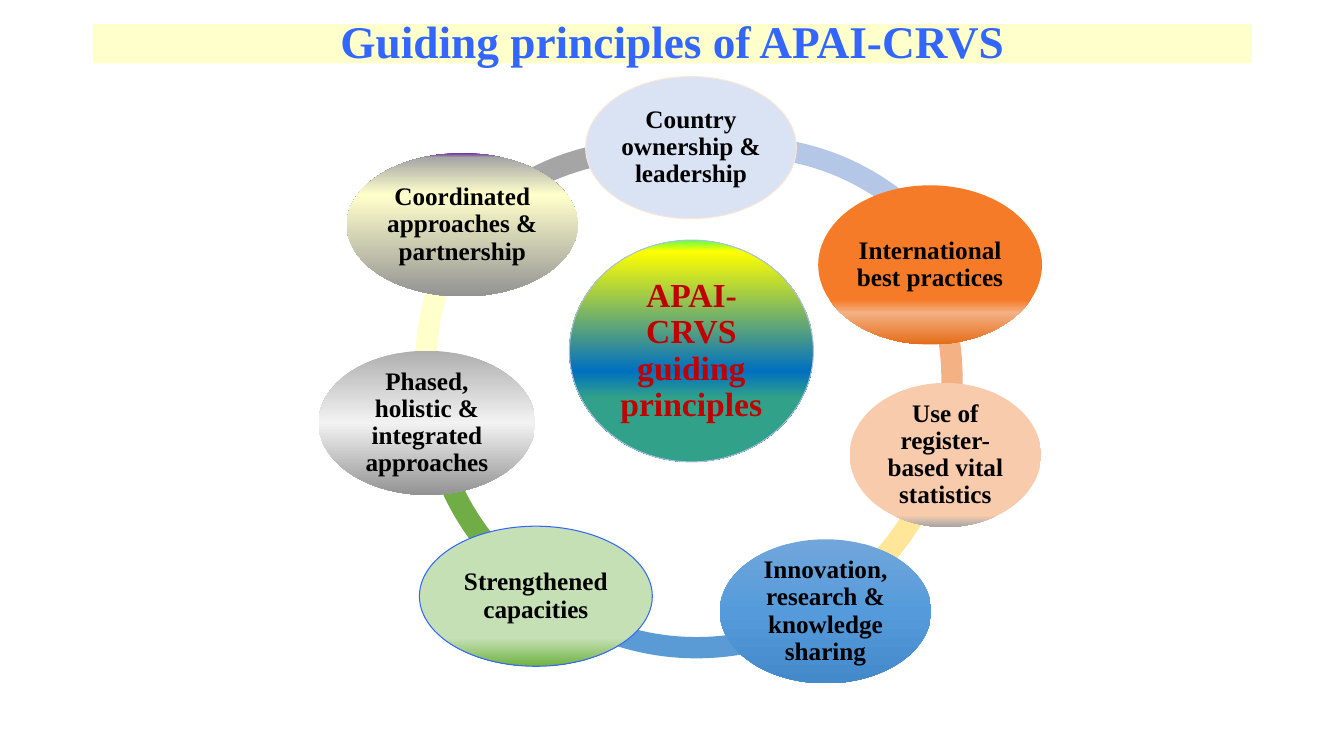
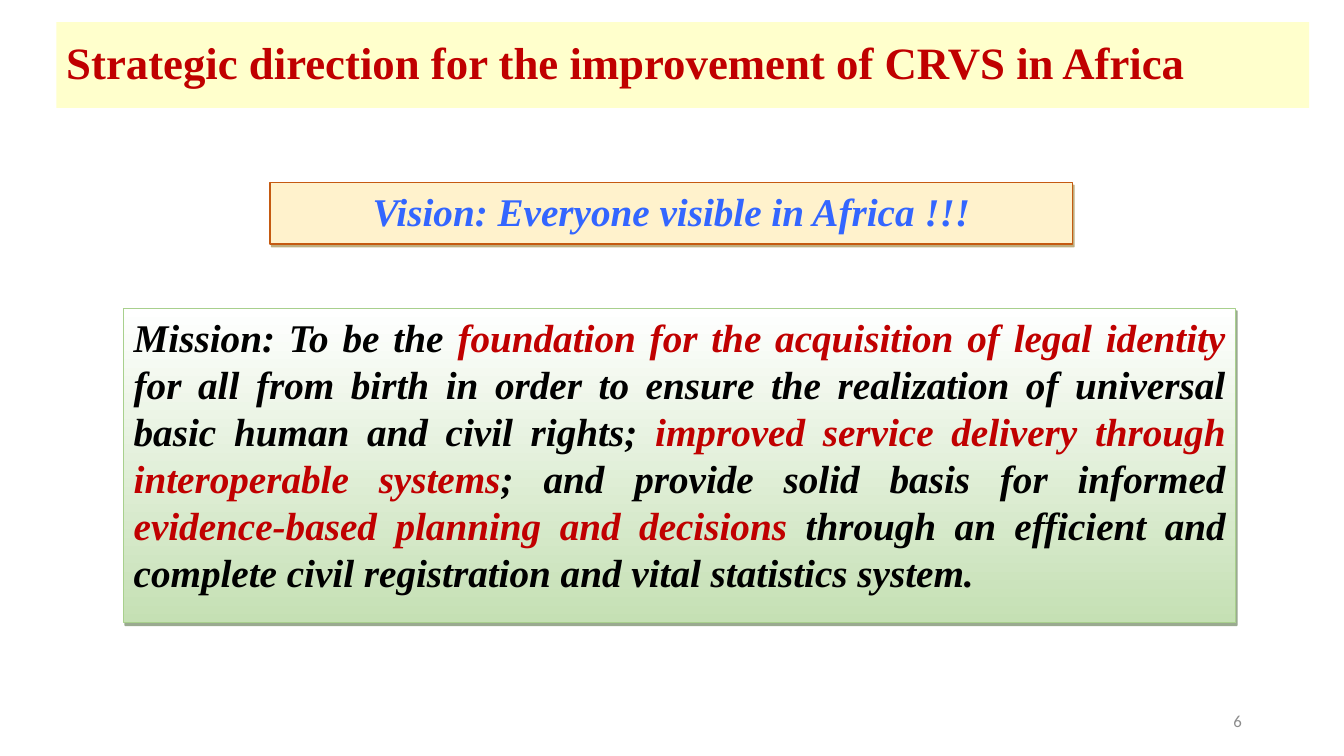
from lxml.etree import SubElement
from pptx import Presentation
from pptx.dml.color import RGBColor
from pptx.enum.shapes import MSO_SHAPE
from pptx.enum.text import MSO_ANCHOR, PP_ALIGN
from pptx.oxml.ns import qn
from pptx.util import Cm, Pt

SERIF = "Times New Roman"
BLACK = RGBColor(0x00, 0x00, 0x00)
WHITE = RGBColor(0xFF, 0xFF, 0xFF)
RED = RGBColor(0xC0, 0x00, 0x00)
BLUE = RGBColor(0x33, 0x66, 0xFF)
CREAM = RGBColor(0xFF, 0xFF, 0xCC)
GREY = RGBColor(0xA5, 0xA5, 0xA5)
SLATE = RGBColor(0x93, 0x93, 0x93)
SILVER = RGBColor(0xAF, 0xAF, 0xAF)
PEARL = RGBColor(0xF2, 0xF2, 0xF2)
DIM = RGBColor(0x8C, 0x8C, 0x8C)
GREEN = RGBColor(0x70, 0xAD, 0x47)
LEAF = RGBColor(0x6F, 0xB2, 0x42)
MINT = RGBColor(0xC5, 0xE0, 0xB4)
SAGE = RGBColor(0xA8, 0xD0, 0x8D)
MOSS = RGBColor(0x37, 0x56, 0x23)
LIME = RGBColor(0x65, 0xFF, 0x43)
TEAL = RGBColor(0x31, 0xA1, 0x8A)
YELLOW = RGBColor(0xFF, 0xFF, 0x00)
SAND = RGBColor(0xFF, 0xE6, 0x99)
WHEAT = RGBColor(0xFF, 0xF2, 0xCC)
BRONZE = RGBColor(0x7F, 0x5F, 0x00)
RUST = RGBColor(0xC5, 0x5A, 0x11)
ORANGE = RGBColor(0xF6, 0x7B, 0x28)
AMBER = RGBColor(0xE5, 0x6C, 0x19)
PEACH = RGBColor(0xF4, 0xB1, 0x83)
SKIN = RGBColor(0xF8, 0xCB, 0xAD)
BLUSH = RGBColor(0xFB, 0xE5, 0xD6)
NAVY = RGBColor(0x00, 0x70, 0xC0)
AZURE = RGBColor(0x5B, 0x9B, 0xD5)
SKY = RGBColor(0x71, 0xA6, 0xDB)
OCEAN = RGBColor(0x55, 0x9B, 0xDB)
DENIM = RGBColor(0x44, 0x8A, 0xCA)
MIST = RGBColor(0xB4, 0xC7, 0xE7)
ICE = RGBColor(0xDA, 0xE3, 0xF3)
HAZE = RGBColor(0xAB, 0xC0, 0xE4)
PURPLE = RGBColor(0x70, 0x30, 0xA0)


def add(slide, kind, box, fill, edge=None, width=0.75):
    """Add a shape; fill is a colour or a list of (percent, colour), top to bottom."""
    shape = slide.shapes.add_shape(kind, *[Cm(v) for v in box])
    shape.shadow.inherit = False
    if isinstance(fill, list):
        shape.fill.gradient()
        shape.fill.gradient_angle = 270
        stops = shape.element.spPr.find(".//" + qn("a:gsLst"))
        for old in list(stops):
            stops.remove(old)
        for place, tint in fill:
            stop = SubElement(stops, qn("a:gs"), pos=str(place * 1000))
            SubElement(stop, qn("a:srgbClr"), val=str(tint))
    else:
        shape.fill.solid()
        shape.fill.fore_color.rgb = fill
    if edge is None:
        shape.line.fill.background()
    else:
        shape.line.color.rgb = edge
        shape.line.width = Pt(width)
    return shape


def write(shape, parts, size, align, space=0.9, anchor=MSO_ANCHOR.MIDDLE,
          font=SERIF, bold=True, italic=False):
    """Fill a shape with one paragraph of (text, colour) parts."""
    frame = shape.text_frame
    frame.word_wrap = True
    frame.vertical_anchor = anchor
    para = frame.paragraphs[0]
    para.alignment = align
    para.line_spacing = space
    for text, tint in parts:
        run = para.add_run()
        run.text = text
        run.font.name = font
        run.font.size = Pt(size)
        run.font.bold = bold
        run.font.italic = italic
        run.font.color.rgb = tint


deck = Presentation()
deck.slide_width, deck.slide_height = Cm(33.87), Cm(19.05)

titles = [
    ("Guiding principles of APAI-CRVS", (2.34, 0.61, 29.21, 0.99),
     32.4, BLUE, PP_ALIGN.CENTER),
    ("Strategic direction for the improvement of CRVS in Africa",
     (1.42, 0.56, 31.57, 2.16), 32, RED, PP_ALIGN.LEFT),
]
slides = []
for text, box, size, tint, align in titles:
    slide = deck.slides.add_slide(deck.slide_layouts[6])
    band = add(slide, MSO_SHAPE.RECTANGLE, box, CREAM)
    write(band, [(text, tint)], size, align)
    slides.append(slide)
wheel, aims = slides

# Ring of arcs: box, start, end, colour
SIDE = 13.41
arcs = [
    ((9.7, 3.51, SIDE, SIDE), 134.26, 167.34, GREY),
    ((10.46, 2.54, SIDE, SIDE), 100.52, 127.81, CREAM),
    ((10.54, 2.92, SIDE, SIDE), 74.8, 102.47, GREEN),
    ((10.85, 3.18, SIDE, SIDE), 35.54, 76.18, AZURE),
    ((10.77, 3.05, SIDE, SIDE), 9.04, 35.72, SAND),
    ((10.85, 2.84, SIDE, SIDE), 200.41, 10.12, PEACH),
    ((12.22, 3.45, 13.16, 13.67), 159.24, 196.07, MIST),
]
for box, start, end, tint in arcs:
    arc = add(wheel, MSO_SHAPE.BLOCK_ARC, box, tint)
    for i, value in enumerate((start, end, 0.04)):
        arc.adjustments[i] = value

# Hub first, then the principles clockwise from the top
nodes = [
    ("APAI-CRVS guiding principles", (14.35, 6.05, 6.15, 5.59),
     [(0, LIME), (5, YELLOW), (59, NAVY), (71, TEAL)], HAZE, 24, RED),
    ("Country ownership & leadership", (14.76, 1.93, 5.31, 3.58),
     ICE, BLUSH, 18, BLACK),
    ("International best practices", (20.62, 4.67, 5.64, 4.01),
     [(72, ORANGE), (80, PEACH), (100, AMBER)], None, 18, BLACK),
    ("Use of register-based vital statistics", (21.41, 9.65, 4.83, 3.63),
     [(92, SKIN), (100, GREY)], None, 18, BLACK),
    ("Innovation, research & knowledge sharing", (18.14, 13.59, 5.33, 3.63),
     [(0, SKY), (50, OCEAN), (100, DENIM)], None, 18, BLACK),
    ("Strengthened capacities", (10.57, 13.26, 5.87, 3.53),
     [(80, MINT), (100, LEAF)], BLUE, 18, BLACK),
    ("Phased, holistic & integrated approaches", (8.03, 8.84, 5.46, 3.63),
     [(0, SILVER), (50, PEARL), (100, SLATE)], None, 18, BLACK),
    ("Coordinated approaches & partnership", (8.74, 3.86, 5.82, 3.61),
     [(0, PURPLE), (3, GREY), (29, CREAM), (100, SLATE)], None, 18, BLACK),
]
for text, box, fill, edge, size, tint in nodes:
    node = add(wheel, MSO_SHAPE.OVAL, box, fill, edge)
    frame = node.text_frame
    frame.margin_left = frame.margin_right = Cm(0.08)
    frame.margin_top = frame.margin_bottom = Cm(0.08)
    write(node, [(text, tint)], size, PP_ALIGN.CENTER)

vision = [("Vision: Everyone visible in Africa !!!", BLUE)]
mission = [
    ("Mission: To be the ", BLACK),
    ("foundation for the acquisition of legal identity", RED),
    (" for all from birth in order to ensure the realization of universal "
     "basic human and civil rights; ", BLACK),
    ("improved service delivery through interoperable systems", RED),
    ("; and provide solid basis for informed ", BLACK),
    ("evidence-based planning and decisions ", RED),
    ("through an efficient and complete civil registration and vital "
     "statistics system.", BLACK),
]
panels = [
    (vision, (6.81, 4.6, 20.22, 1.55), WHEAT, RUST, BRONZE, PP_ALIGN.CENTER),
    (mission, (3.12, 7.77, 28.02, 7.92), [(0, WHITE), (100, MINT)], SAGE, MOSS,
     PP_ALIGN.JUSTIFY),
]
for parts, box, fill, edge, shade, align in panels:
    panel = add(aims, MSO_SHAPE.RECTANGLE, box, fill, edge, 1)
    effect = panel.element.spPr.find(qn("a:effectLst"))
    drop = SubElement(effect, qn("a:outerShdw"), blurRad="0", dist=str(Pt(2.2)),
                      dir=str(63 * 60000), algn="ctr", rotWithShape="0")
    tone = SubElement(drop, qn("a:srgbClr"), val=str(shade))
    SubElement(tone, qn("a:alpha"), val="50000")
    write(panel, parts, 28, align, 1.0, MSO_ANCHOR.TOP, italic=True)

number = aims.shapes.add_textbox(Cm(23.93), Cm(17.65), Cm(7.62), Cm(1.02))
write(number, [("6", DIM)], 12, PP_ALIGN.RIGHT, 1.0, font="Calibri", bold=False)

deck.save("out.pptx")
